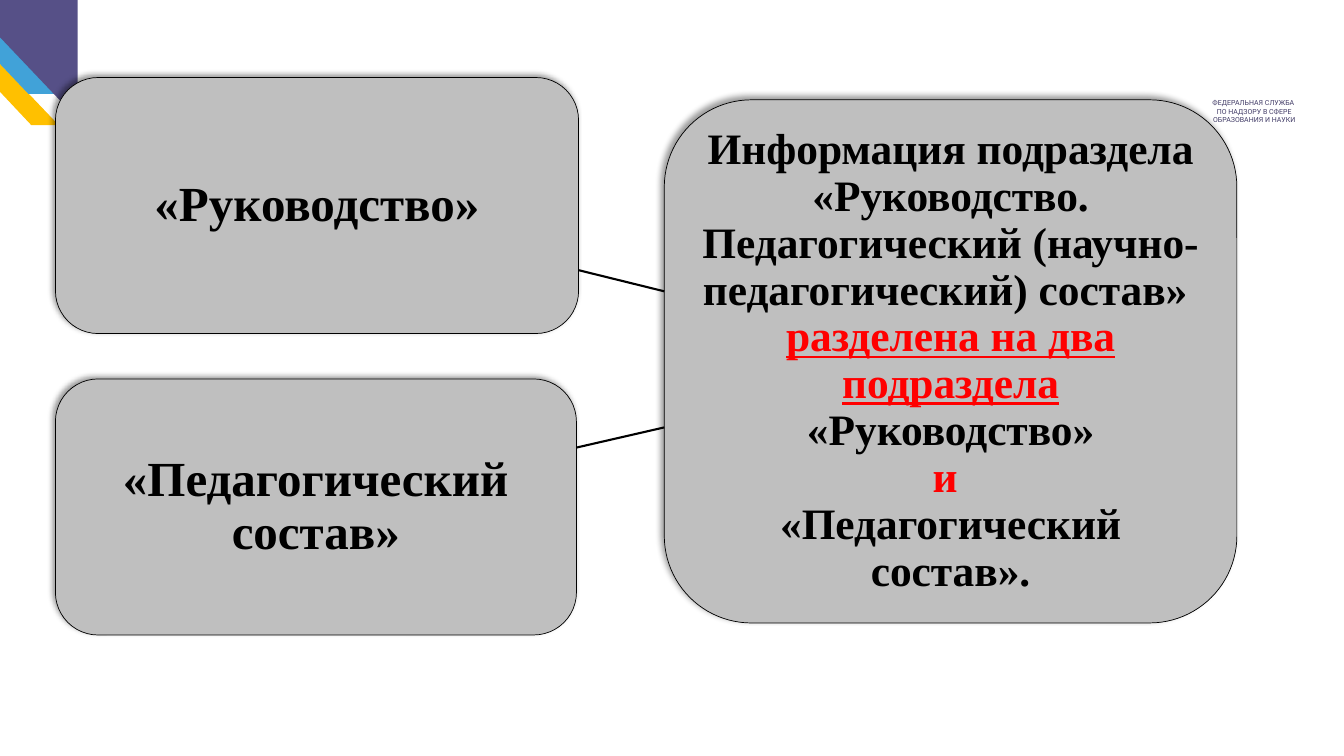
from lxml import etree
from pptx import Presentation
from pptx.dml.color import RGBColor
from pptx.enum import shapes, text
from pptx.oxml import ns
from pptx.util import Pt

BLACK = RGBColor(0x00, 0x00, 0x00)
RED = RGBColor(0xFF, 0x00, 0x00)
GREY = RGBColor(0xBF, 0xBF, 0xBF)
PURPLE = RGBColor(0x56, 0x50, 0x87)
BLUE = RGBColor(0x41, 0xA2, 0xD8)
YELLOW = RGBColor(0xFF, 0xC0, 0x00)
CAPTION = RGBColor(0x41, 0x3B, 0x66)

SERIF = "Times New Roman"
LEFT_X, RIGHT_X = 39.6, 474.5
LEFT_HEIGHT = 182.9

CORNER = (
    (YELLOW, ((0, 45.4), (41.8, 89.3), (22.3, 89.3), (0, 65.6))),
    (BLUE, ((0, 25), (39.6, 67), (20.2, 67), (0, 45.7))),
    (PURPLE, ((0, 0), (55.5, 0), (55.5, 85), (0, 26.6))),
)
SUMMARY = (
    ("Информация подраздела «Руководство. Педагогический "
     "(научно-педагогический) состав» ", {"end_line": True}),
    ("разделена на два подраздела ", {"color": RED, "underline": True}),
    ("«Руководство»", {"end_line": True}),
    ("и ", {"color": RED, "end_line": True}),
    ("«Педагогический состав».", {}),
)


def add_span(para, words, *, size, font=SERIF, color=BLACK, bold=True,
             underline=False, end_line=False):
    span = para.add_run()
    span.text = words
    span.font.name = font
    span.font.size = Pt(size)
    span.font.bold = bold
    span.font.underline = underline
    span.font.color.rgb = color
    if end_line:
        para.add_line_break()


def add_corner_piece(page, color, points):
    corners = [(Pt(x), Pt(y)) for x, y in points]
    builder = page.shapes.build_freeform(*corners[0])
    builder.add_line_segments(corners[1:], close=True)
    piece = builder.convert_to_shape()
    piece.shadow.inherit = False
    piece.fill.solid()
    piece.fill.fore_color.rgb = color
    piece.line.fill.background()


def cast_shadow(box):
    box.shadow.inherit = False
    effects = box._element.spPr.find(ns.qn("a:effectLst"))
    shadow = etree.SubElement(
        effects, ns.qn("a:outerShdw"), blurRad=str(Pt(4)), dist=str(Pt(3)),
        dir=str(225 * 60000), algn="br", rotWithShape="0")
    color = etree.SubElement(shadow, ns.qn("a:srgbClr"), val=str(BLACK))
    etree.SubElement(color, ns.qn("a:alpha"), val="40000")


def add_box(page, left, top, width, height, spans, *, size, margin):
    box = page.shapes.add_shape(
        shapes.MSO_SHAPE.ROUNDED_RECTANGLE,
        Pt(left), Pt(top), Pt(width), Pt(height))
    box.fill.solid()
    box.fill.fore_color.rgb = GREY
    box.line.color.rgb = BLACK
    box.line.width = Pt(0.5)
    cast_shadow(box)
    frame = box.text_frame
    frame.word_wrap = True
    frame.vertical_anchor = text.MSO_ANCHOR.MIDDLE
    frame.margin_left = frame.margin_right = Pt(margin)
    frame.margin_top = frame.margin_bottom = Pt(margin)
    para = frame.paragraphs[0]
    para.alignment = text.PP_ALIGN.CENTER
    para.line_spacing = 0.9
    for words, style in spans:
        add_span(para, words, size=size, **style)


def add_link(page, start_y, end_x, end_y):
    link = page.shapes.add_connector(
        shapes.MSO_CONNECTOR.STRAIGHT,
        Pt(RIGHT_X), Pt(start_y), Pt(end_x), Pt(end_y))
    link.line.color.rgb = BLACK
    link.line.width = Pt(1.5)
    etree.SubElement(link._element.spPr, ns.qn("a:effectLst"))


def add_caption(page, lines):
    box = page.shapes.add_textbox(Pt(847.4), Pt(67), Pt(97.2), Pt(25.2))
    frame = box.text_frame
    frame.word_wrap = True
    for index, words in enumerate(lines):
        para = frame.add_paragraph() if index else frame.paragraphs[0]
        para.alignment = text.PP_ALIGN.CENTER
        add_span(para, words, size=5, font="Roboto", color=CAPTION, bold=False)


def main():
    deck = Presentation()
    deck.slide_width, deck.slide_height = Pt(960), Pt(540)
    page = deck.slides.add_slide(deck.slide_layouts[6])
    for color, points in CORNER:
        add_corner_piece(page, color, points)
    add_caption(page, ("ФЕДЕРАЛЬНАЯ СЛУЖБА ",
                       "ПО НАДЗОРУ В СФЕРЕ ОБРАЗОВАНИЯ И НАУКИ"))
    add_box(page, RIGHT_X, 71.3, 409, 373.7, SUMMARY, size=31, margin=6.5)
    add_link(page, 208.1, 413.3, 193)
    add_box(page, LEFT_X, 55.4, 373.7, LEFT_HEIGHT,
            [("«Руководство»", {})], size=35, margin=7.2)
    add_link(page, 305.3, 411.8, 319.7)
    add_box(page, LEFT_X, 270.7, 372.2, LEFT_HEIGHT,
            [("«Педагогический состав»", {})], size=35, margin=7.2)
    deck.save("out.pptx")


if __name__ == "__main__":
    main()
